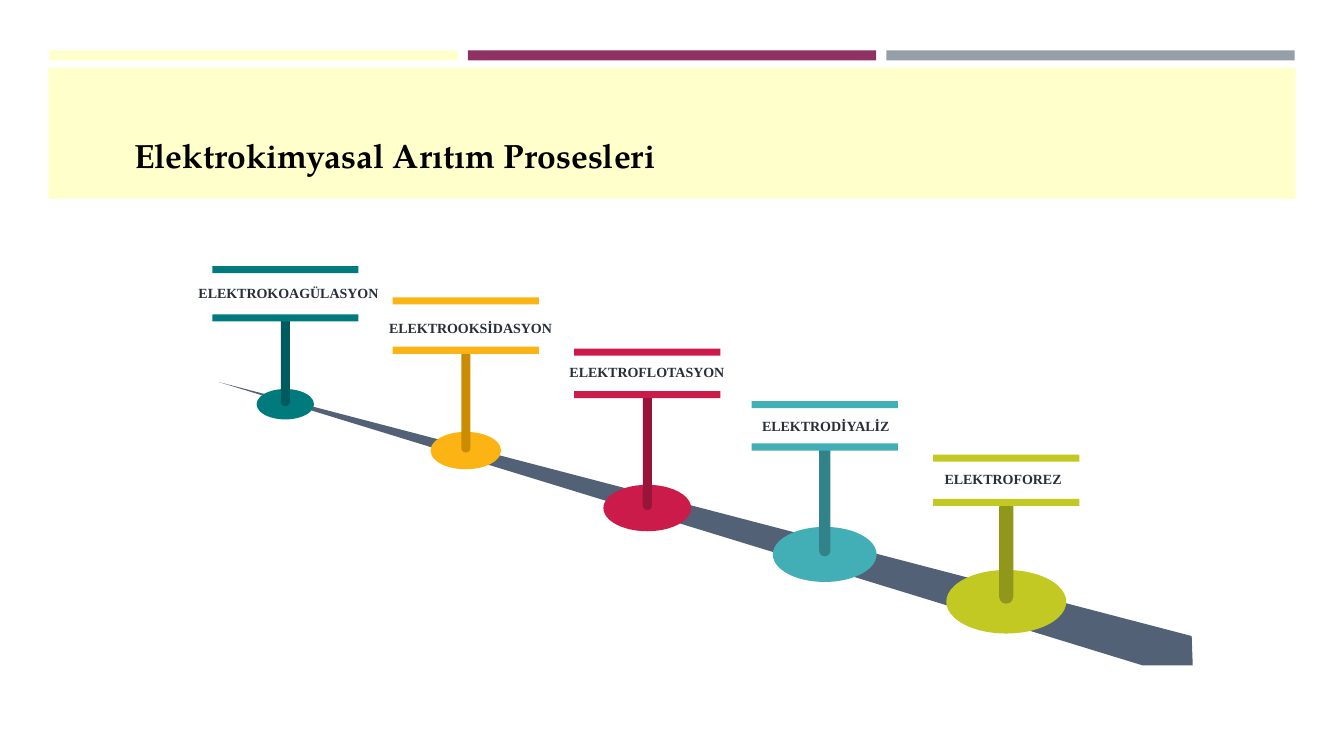
from pptx import Presentation
from pptx.dml.color import RGBColor
from pptx.enum.shapes import MSO_SHAPE
from pptx.enum.text import MSO_ANCHOR, PP_ALIGN
from pptx.util import Inches, Pt

theme = {
    "cream": "FFFFCC", "plum": "903163", "grey": "969FA7", "road": "536176",
    "ink": "000000", "label": "282F39",
    "head": "TeX Gyre Pagella", "body": "Times New Roman",
    "big": 24, "small": 10,
}
cell = Inches(0.1)  # the grid: all lengths below are columns and rows of this cell

deck = Presentation()
deck.slide_width, deck.slide_height = Inches(13.33), Inches(7.5)
slide = deck.slides.add_slide(deck.slide_layouts[5])
shapes = slide.shapes


def paint(shape, color):
    shape.fill.solid()
    shape.fill.fore_color.rgb = RGBColor.from_string(color)
    shape.line.fill.background()
    shape.shadow.inherit = False


def write(text, box, font, size, color, align, anchor, wrap=True):
    frame = box.text_frame
    frame.text = text
    frame.word_wrap = wrap
    frame.vertical_anchor = anchor
    line = frame.paragraphs[0]
    line.alignment = align
    line.font.name, line.font.size, line.font.bold = font, Pt(size), True
    line.font.color.rgb = RGBColor.from_string(color)


# Header: three strips over a banner
strips = [(4.9 + 41.5 * i, 5, 40.5, 1, theme[name])
          for i, name in enumerate(("cream", "plum", "grey"))]
for x, y, w, h, color in strips + [(4.8, 6.7, 123.7, 13, theme["cream"])]:
    band = shapes.add_shape(MSO_SHAPE.RECTANGLE, *(int(n * cell) for n in (x, y, w, h)))
    paint(band, color)

# Title, brought in front of the banner
title = shapes.title
title.left, title.top, title.width, title.height = (
    int(n * cell) for n in (12.3, 12.9, 89.2, 5))
write("Elektrokimyasal Arıtım Prosesleri", title, font=theme["head"],
      size=theme["big"], color=theme["ink"], align=PP_ALIGN.LEFT,
      anchor=MSO_ANCHOR.MIDDLE)
band.element.addnext(title.element)

# Road, widening towards the viewer
pen = shapes.build_freeform(217, 379, scale=cell / 10)
pen.add_line_segments([(1182, 631), (1183, 660), (1133, 660)], close=True)
paint(pen.convert_to_shape(), theme["road"])

# Signs: text, colour, pole colour, centre, upper bar, lower bar,
# disc middle, disc width, pole width, label left, label top, label width
signs = [
    ("ELEKTROFOREZ", "C2C923", "91971A", 99.8, 45.1, 49.5, 59.7, 11.9, 1.4, 92.7, 46.2, 14.6),
    ("ELEKTRODİYALİZ", "42AFB6", "318389", 81.8, 39.8, 44, 55, 10.3, 1.1, 74.6, 40.9, 15.8),
    ("ELEKTROFLOTASYON", "CB1B4A", "981438", 64.2, 34.6, 38.8, 50.4, 8.7, 0.9, 55.5, 35.6, 17.7),
    ("ELEKTROOKSİDASYON", "FCB414", "C98C03", 46.2, 29.5, 34.4, 44.7, 7, 0.9, 37.6, 31.2, 18.2),
    ("ELEKTROKOAGÜLASYON", "007A7D", "005B5E", 28.3, 26.4, 31.2, 40.1, 5.7, 0.9, 18.7, 27.7, 24.1),
]
bar, thick, flat = 14.5, 0.7, 0.53  # bar length and height, disc height per width
for text, color, dark, mid, high, low, base, disc, pole, left, top, wide in signs:
    parts = [
        (MSO_SHAPE.OVAL, color, disc, base - disc * flat / 2, disc * flat),
        (MSO_SHAPE.ROUNDED_RECTANGLE, dark, pole, low + 0.1, base + 0.1 - low),
        (MSO_SHAPE.RECTANGLE, color, bar, high, thick),
        (MSO_SHAPE.RECTANGLE, color, bar, low, thick),
    ]
    for kind, fill, w, y, h in parts:
        part = shapes.add_shape(kind, *(int(n * cell) for n in (mid - w / 2, y, w, h)))
        paint(part, fill)
        if kind == MSO_SHAPE.ROUNDED_RECTANGLE:
            part.adjustments[0] = 0.5
    box = shapes.add_textbox(*(int(n * cell) for n in (left, top, wide, 2.7)))
    write(text, box, font=theme["body"], size=theme["small"], color=theme["label"],
          align=PP_ALIGN.JUSTIFY, anchor=MSO_ANCHOR.TOP)

deck.save("out.pptx")
